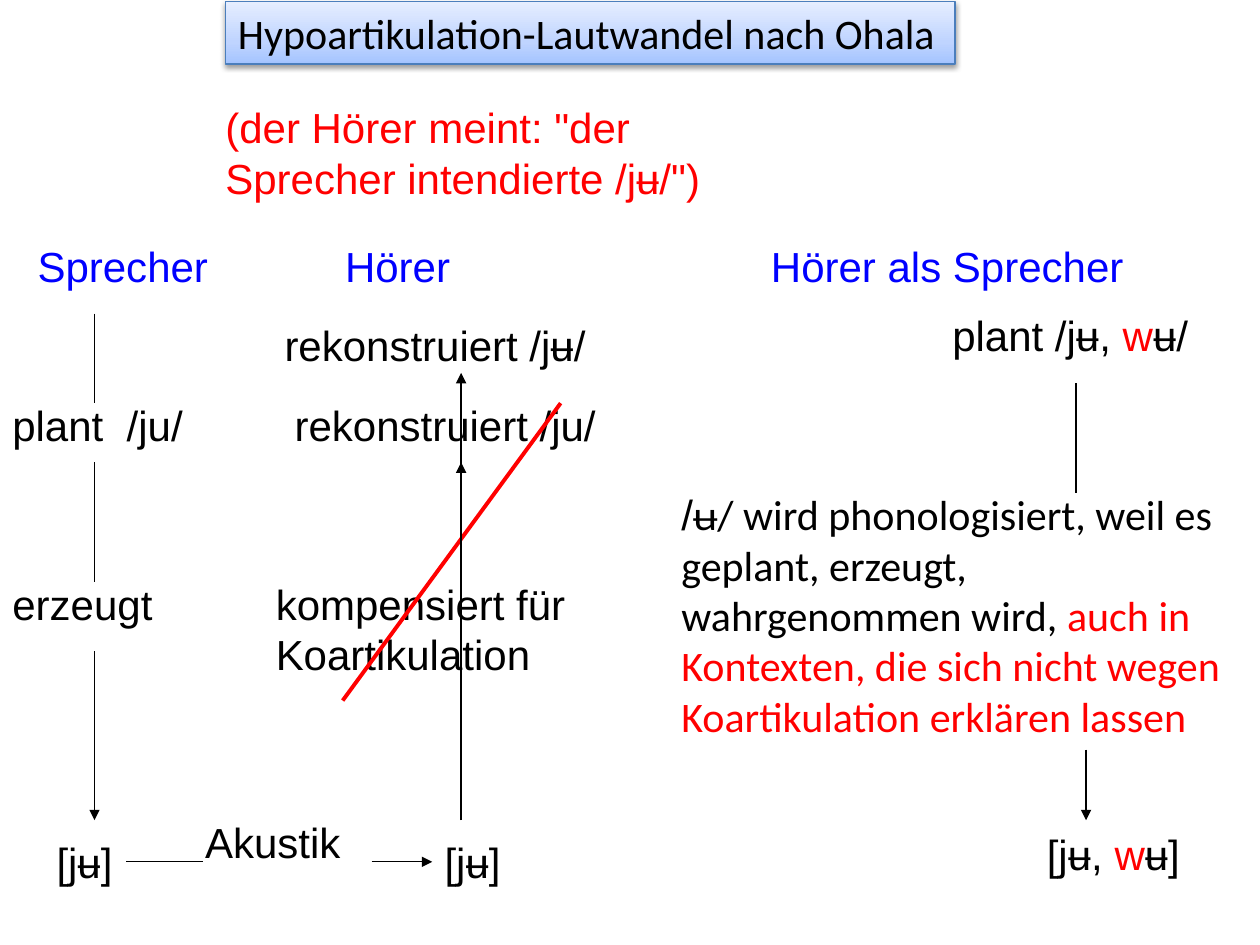
from dataclasses import dataclass

from lxml import etree
from pptx import Presentation
from pptx.dml.color import RGBColor
from pptx.enum.shapes import MSO_CONNECTOR as Conn, MSO_SHAPE as Shape
from pptx.enum.text import MSO_ANCHOR as Anchor, MSO_AUTO_SIZE as AutoSize, PP_ALIGN as Align
from pptx.oxml import parse_xml
from pptx.oxml.ns import nsdecls, qn
from pptx.util import Inches, Pt


@dataclass(frozen=True)
class Theme:
    black: str = "000000"
    red: str = "FF0000"
    blue: str = "0000FF"
    border: str = "4B7EBC"
    gradient: tuple = ((0, "A4C4FF"), (35, "BFD4FF"), (100, "E6EEFF"))
    sans: str = "Arial"
    title_font: str = "Calibri"
    size: int = 24
    thin: float = 0.75
    thick: float = 2.25


THEME = Theme()
LINE_H = 0.5  # height of a one-line label


def write(shape, runs, wrap):
    """Fill a shape with runs of (text, format values)."""
    tf = shape.text_frame
    frame_format = {"word_wrap": wrap, "auto_size": AutoSize.SHAPE_TO_FIT_TEXT,
                    "vertical_anchor": Anchor.TOP}
    for name, value in frame_format.items():
        setattr(tf, name, value)
    p = tf.paragraphs[0]
    p.alignment = Align.LEFT
    for text, changes in runs:
        look = {"name": THEME.sans, "size": Pt(THEME.size), "color": THEME.black, **changes}
        r = p.add_run()
        r.text = text
        r.font.color.rgb = RGBColor.from_string(look.pop("color"))
        for name, value in look.items():
            setattr(r.font, name, value)


def label(s, box, x, y, w, text, h=LINE_H, wrap=False, **look):
    """Add text at an offset from the region's corner; text may be a list of runs."""
    left, top = box
    tb = s.shapes.add_textbox(Inches(left + x), Inches(top + y), Inches(w), Inches(h))
    write(tb, [(text, look)] if isinstance(text, str) else text, wrap)
    return tb


def line(s, box, start, end, arrow=False, color=THEME.black, width=THEME.thin):
    left, top = box
    cx = s.shapes.add_connector(
        Conn.STRAIGHT, Inches(left + start[0]), Inches(top + start[1]),
        Inches(left + end[0]), Inches(top + end[1]))
    cx.line.color.rgb = RGBColor.from_string(color)
    cx.line.width = Pt(width)
    if arrow:
        etree.SubElement(cx.line._get_or_add_ln(), qn("a:tailEnd"), type="triangle")
    etree.SubElement(cx._element.spPr, qn("a:effectLst"))
    return cx


def title(s, box, w):
    left, top = box
    sp = s.shapes.add_shape(Shape.RECTANGLE, Inches(left), Inches(top), Inches(w), Inches(LINE_H))
    sp.line.color.rgb = RGBColor.from_string(THEME.border)
    sp.line.width = Pt(THEME.thin)
    stops = "".join(f'<a:gs pos="{pos * 1000}"><a:srgbClr val="{color}"/></a:gs>'
                    for pos, color in THEME.gradient)
    ln = sp._element.spPr.find(qn("a:ln"))
    ln.addprevious(parse_xml(
        f'<a:gradFill {nsdecls("a")} rotWithShape="1"><a:gsLst>{stops}</a:gsLst>'
        '<a:lin ang="16200000" scaled="0"/></a:gradFill>'))
    ln.addnext(parse_xml(
        f'<a:effectLst {nsdecls("a")}><a:outerShdw blurRad="{Pt(3.1)}" dist="{Pt(1.6)}" '
        f'dir="5400000" rotWithShape="0"><a:srgbClr val="{THEME.black}">'
        '<a:alpha val="38000"/></a:srgbClr></a:outerShdw></a:effectLst>'))
    write(sp, [("Hypoartikulation-Lautwandel nach Ohala", {"name": THEME.title_font})], False)


def speaker(s, box):
    """Draw the speaker's column and return its spoken form."""
    label(s, box, 0.2, 0, 1.57, "Sprecher", color=THEME.blue)
    label(s, box, 0, 1.26, 1.73, "plant  /ju/", wrap=True)
    label(s, box, 0, 2.68, 1.32, "erzeugt")
    for top, bottom, arrow in ((0.63, 1.34, False), (1.81, 2.76, False), (3.31, 4.65, True)):
        line(s, box, (0.75, top), (0.75, bottom), arrow)
    return label(s, box, 0.35, 4.73, 0.65, "[jʉ]")


def listener(s, box):
    """Draw the listener's column and return the heard form."""
    axis = 1.57
    label(s, box, 0.55, 0, 1.04, "Hörer", color=THEME.blue)
    heard = label(s, box, 1.34, 4.73, 0.65, "[jʉ]")
    label(s, box, 0, 2.68, 2.68, "kompensiert für Koartikulation", h=0.91, wrap=True)
    label(s, box, 0.15, 1.26, 2.61, "rekonstruiert /ju/")
    line(s, box, (axis, 2.76), (axis, 1.81), arrow=True)
    line(s, box, (axis, 4.65), (axis, 3.62))
    line(s, box, (0.63, 3.7), (2.36, 1.34), color=THEME.red, width=THEME.thick)
    label(s, box, 0.07, 0.63, 2.61, "rekonstruiert /jʉ/")
    line(s, box, (axis, 4.65), (axis, 1.1), arrow=True)
    return heard


def acoustics(s, box, spoken, heard):
    """Link the spoken form to the heard form."""
    label(s, box, 0, 0, 1.73, "Akustik", wrap=True)
    middle = 0.41
    line(s, box, (-0.53, middle), (0.08, middle)).begin_connect(spoken, 3)
    line(s, box, (1.42, middle), (1.9, middle), arrow=True).end_connect(heard, 1)


def new_speaker(s, box):
    red = {"color": THEME.red}
    body = {"name": THEME.title_font}
    label(s, box, 0.71, 0, 3.31, "Hörer als Sprecher", wrap=True, color=THEME.blue)
    label(s, box, 0, 1.97, 4.53, [
        ("/", {}),
        ("ʉ/ wird phonologisiert, weil es geplant, erzeugt, wahrgenommen wird, ", body),
        ("auch in Kontexten, die sich nicht wegen Koartikulation erklären lassen", body | red),
    ], h=2.12, wrap=True)
    for x, y, w, before, after in ((2.15, 0.55, 2.17, "plant /jʉ, ", "ʉ/"),
                                   (2.9, 4.67, 1.27, "[jʉ, ", "ʉ]")):
        label(s, box, x, y, w, [(before, {}), ("w", red), (after, {})])
    line(s, box, (3.23, 1.18), (3.23, 2.05))
    line(s, box, (3.31, 4.09), (3.31, 4.65), arrow=True)


def main():
    prs = Presentation()
    prs.slide_width, prs.slide_height = Inches(10), Inches(7.5)
    s = prs.slides.add_slide(prs.slide_layouts[6])
    columns_top = 1.86
    label(s, (1.69, 0.76), 0, 0, 4.25, '(der Hörer meint: "der Sprecher intendierte /jʉ/")',
          h=0.91, wrap=True, color=THEME.red)
    title(s, (1.79, 0.01), 5.79)
    new_speaker(s, (5.31, columns_top))
    spoken = speaker(s, (0, columns_top))
    heard = listener(s, (2.09, columns_top))
    acoustics(s, (1.53, 6.43), spoken, heard)
    prs.save("out.pptx")


if __name__ == "__main__":
    main()
